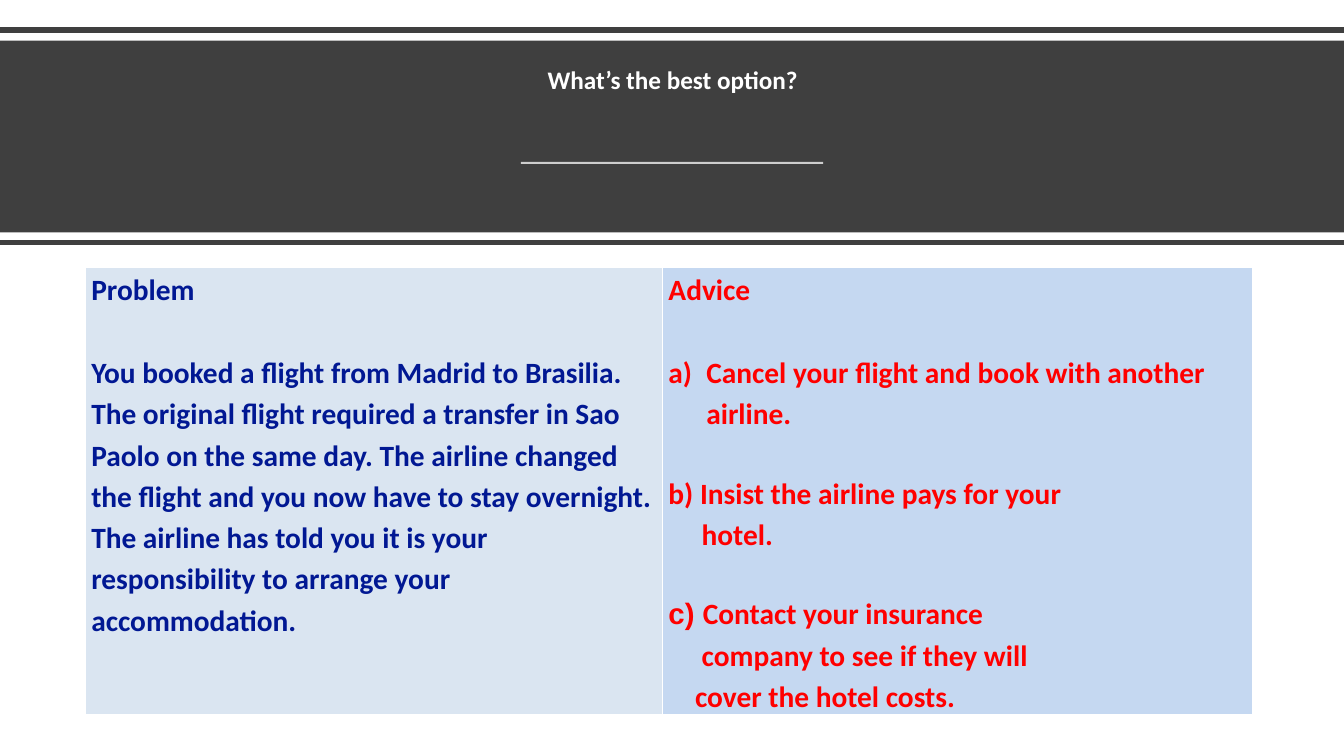
from lxml import etree
from pptx import Presentation, util as u
from pptx.dml.color import RGBColor
from pptx.enum import shapes, text
from pptx.oxml import ns

Pt = u.Pt
CHARCOAL = RGBColor(0x3F, 0x3F, 0x3F)
WHITE = RGBColor(0xFF, 0xFF, 0xFF)
NAVY = RGBColor(0x01, 0x18, 0x93)
RED = RGBColor(0xFF, 0x00, 0x00)
PALE_BLUE = RGBColor(0xDA, 0xE5, 0xF1)
LIGHT_BLUE = RGBColor(0xC5, 0xD8, 0xF1)

WIDTH, HEIGHT = 960, 540
BLANK_LINE = 27.2


def add_xml(parent, tag, **attributes):
    return etree.SubElement(parent, ns.qn(tag), attributes)


def write(paragraph, words, font="Calibri", size=21, color=NAVY, align=None,
          spacing=1.15, before=0, after=0, indent=0, hanging=0, numbered=False):
    """Add a bold run to a paragraph and format both."""
    run = paragraph.add_run()
    run.text = words
    run.font.name = font
    run.font.size = Pt(size)
    run.font.bold = True
    run.font.color.rgb = color
    paragraph.alignment = align
    paragraph.line_spacing = spacing
    paragraph.space_before = Pt(before)
    paragraph.space_after = Pt(after)
    properties = paragraph._p.get_or_add_pPr()
    properties.set("marL", str(Pt(indent)))
    properties.set("indent", str(Pt(-hanging)))
    if numbered:
        bullet_color = add_xml(properties, "a:buClr")
        add_xml(bullet_color, "a:srgbClr", val=str(color))
        add_xml(properties, "a:buAutoNum", type="alphaLcParenR")


class SlideBuilder:
    def __init__(self, slide, font="Calibri"):
        self.slide = slide
        self.font = font

    def title(self, words, left, top, width, height):
        shape = self.slide.shapes.title
        shape.left, shape.top = Pt(left), Pt(top)
        shape.width, shape.height = Pt(width), Pt(height)
        frame = shape.text_frame
        frame.auto_size = text.MSO_AUTO_SIZE.NONE
        frame.word_wrap = True
        frame.vertical_anchor = text.MSO_ANCHOR.TOP
        frame.margin_top = Pt(9)
        write(frame.paragraphs[0], words, font=self.font, size=18, color=WHITE,
              align=text.PP_ALIGN.CENTER, spacing=0.9)

    def band(self, top, height, color):
        shape = self.slide.shapes.add_shape(
            shapes.MSO_SHAPE.RECTANGLE, 0, Pt(top), Pt(WIDTH), Pt(height))
        shape.shadow.inherit = False
        shape.fill.solid()
        shape.fill.fore_color.rgb = color
        shape.line.fill.background()

    def line(self, left, right, y, color, weight, opacity=100):
        line = self.slide.shapes.add_connector(
            shapes.MSO_CONNECTOR.STRAIGHT, Pt(left), Pt(y), Pt(right), Pt(y))
        line.line.color.rgb = color
        line.line.width = Pt(weight)
        properties = line._element.spPr
        if opacity < 100:
            color_element = properties.find(".//" + ns.qn("a:srgbClr"))
            add_xml(color_element, "a:alpha", val=str(opacity * 1000))
        add_xml(properties, "a:effectLst")

    def table(self, left, top, widths, height, columns):
        table = self.slide.shapes.add_table(
            1, len(columns), Pt(left), Pt(top), Pt(sum(widths)), Pt(height)).table
        table.first_row = table.horz_banding = False
        for index, (width, (fill, color, lines)) in enumerate(zip(widths, columns)):
            table.columns[index].width = Pt(width)
            self.cell(table.cell(0, index), fill, color, lines)

    def cell(self, cell, fill, color, lines):
        cell.margin_left = cell.margin_right = Pt(4)
        cell.margin_top = cell.margin_bottom = 0
        properties = cell._tc.get_or_add_tcPr()
        for side, weight in (("L", 1), ("R", 1), ("T", 1), ("B", 3)):
            border = add_xml(properties, "a:ln" + side, w=str(Pt(weight)))
            add_xml(add_xml(border, "a:solidFill"), "a:srgbClr", val=str(WHITE))
        cell.fill.solid()
        cell.fill.fore_color.rgb = fill
        frame = cell.text_frame
        for index, (runs, layout) in enumerate(lines):
            paragraph = frame.add_paragraph() if index else frame.paragraphs[0]
            for words, font in runs:
                write(paragraph, words, font=font or self.font, color=color, **layout)


def line_of(words, **layout):
    return [(words, None)], layout


def main():
    presentation = Presentation()
    presentation.slide_width, presentation.slide_height = Pt(WIDTH), Pt(HEIGHT)
    slide = presentation.slides.add_slide(presentation.slide_layouts[5])
    builder = SlideBuilder(slide)

    # Header band with its rules
    builder.band(29, 137, CHARCOAL)
    for y in (21.5, 173.2):
        builder.line(0, WIDTH, y, CHARCOAL, 4)
    builder.line(372, 588, 116.4, WHITE, 1.5, opacity=75)

    # Title, brought in front of the band
    builder.title("What’s the best option?", 42, 39, 877, 73.5)
    slide.shapes._spTree.append(slide.shapes.title._element)

    # Problem and advice
    problem = [
        line_of("Problem", after=29.5),
        line_of("You booked a flight from Madrid to Brasilia. The original flight "
                "required a transfer in Sao Paolo on the same day. The airline "
                "changed the flight and you now have to stay overnight. The airline "
                "has told you it is your responsibility to arrange your "
                "accommodation."),
    ]
    advice = [
        line_of("Advice", after=29.5),
        line_of("Cancel your flight and book with another airline.",
                indent=27, hanging=27, numbered=True),
        line_of("b) Insist the airline pays for your", before=BLANK_LINE),
        line_of("hotel.", indent=23.7),
        ([("c) ", "Arial"), ("Contact your insurance", None)],
         {"before": BLANK_LINE}),
        line_of("company to see if they will", indent=23.7),
        line_of("cover the hotel costs.", indent=19),
    ]
    builder.table(61.2, 191, (412.3, 421), 314.6,
                  [(PALE_BLUE, NAVY, problem), (LIGHT_BLUE, RED, advice)])

    presentation.save("out.pptx")


if __name__ == "__main__":
    main()
